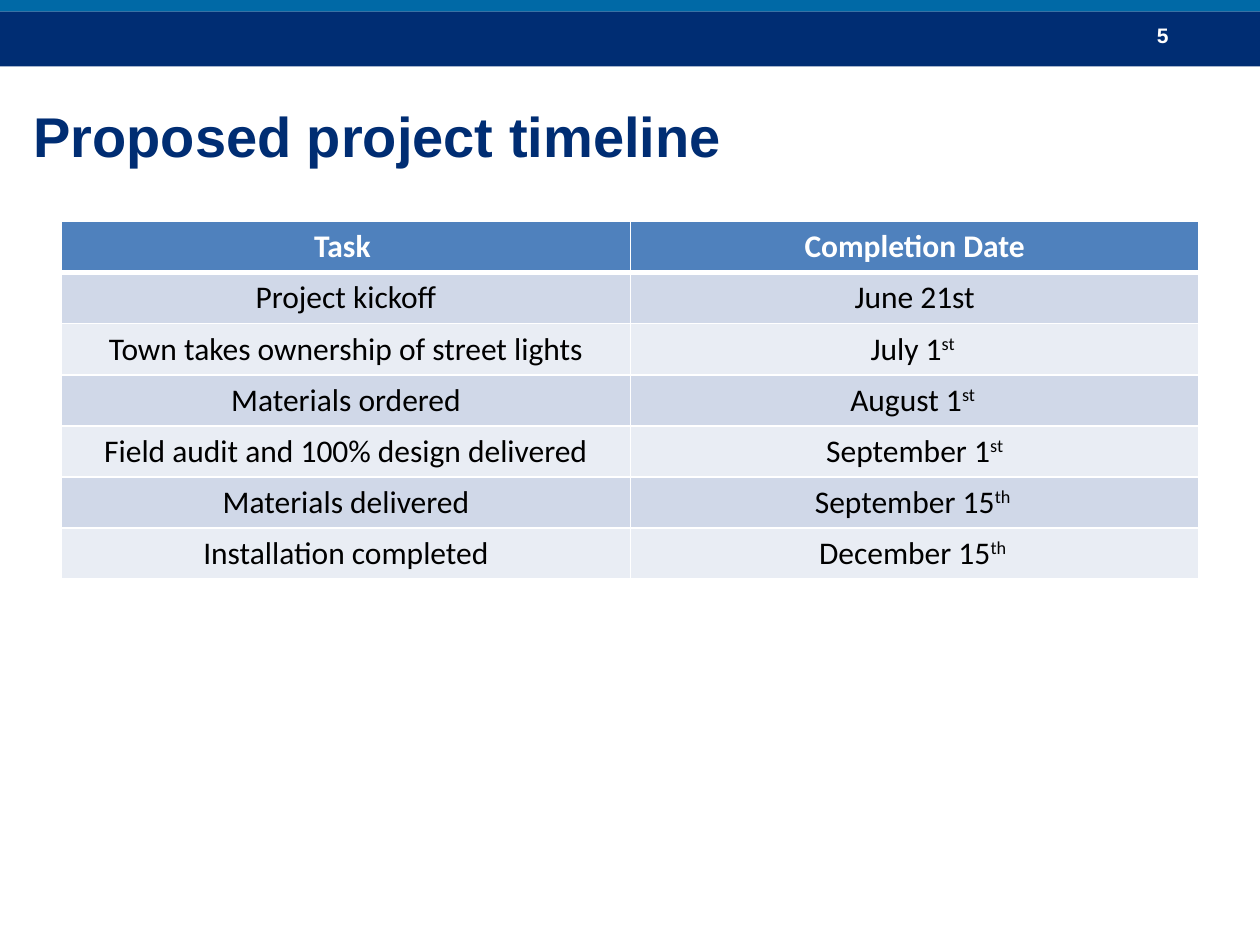
"""Build the project timeline slide with its header bands, title and task table."""
from dataclasses import dataclass

from lxml import etree
from pptx import Presentation, util as u
from pptx.dml.color import RGBColor
from pptx.enum import shapes, text
from pptx.oxml.ns import qn

NAVY, BLUE, WHITE, BLACK = "002D73", "0069A6", "FFFFFF", "000000"
HEADER_FILL, ROW_FILLS = "4F81BD", ("D0D8E8", "E9EDF4")
ROW_HEIGHT, COLUMN_WIDTH = 29.2, 325


@dataclass(frozen=True)
class Box:
    left: float
    top: float
    width: float
    height: float

    def lengths(self) -> tuple:
        return tuple(u.Pt(value) for value in (self.left, self.top, self.width, self.height))


@dataclass(frozen=True)
class Style:
    size: float
    font: str
    color: str
    bold: bool


@dataclass(frozen=True)
class Task:
    name: str
    date: str
    suffix: str = ""


TASKS = (
    Task("Project kickoff", "June 21st"),
    Task("Town takes ownership of street lights", "July 1", "st "),
    Task("Materials ordered", "August 1", "st "),
    Task("Field audit and 100% design delivered", "September 1", "st"),
    Task("Materials delivered", "September 15", "th "),
    Task("Installation completed", "December 15", "th "),
)


def set_fill(fill, color: str) -> None:
    fill.solid()
    fill.fore_color.rgb = RGBColor.from_string(color)


def add_run(paragraph, content: str, style: Style, superscript: bool = False) -> None:
    run = paragraph.add_run()
    run.text = content
    run.font.size = u.Pt(style.size)
    run.font.name = style.font
    run.font.bold = style.bold
    run.font.color.rgb = RGBColor.from_string(style.color)
    if superscript:
        run._r.get_or_add_rPr().set("baseline", "30000")


def add_band(slide, box: Box, color: str) -> None:
    shape = slide.shapes.add_shape(shapes.MSO_SHAPE.RECTANGLE, *box.lengths())
    shape.shadow.inherit = False
    set_fill(shape.fill, color)
    shape.line.fill.background()


def add_label(slide, box: Box, content: str, style: Style, anchor) -> None:
    frame = slide.shapes.add_textbox(*box.lengths()).text_frame
    frame.word_wrap = True
    frame.vertical_anchor = anchor
    add_run(frame.paragraphs[0], content, style)


def set_borders(cell, bottom_width: float) -> None:
    properties = cell._tc.get_or_add_tcPr()
    for side, width in (("L", 1), ("R", 1), ("T", 1), ("B", bottom_width)):
        line = etree.SubElement(properties, qn(f"a:ln{side}"), w=str(u.Pt(width)))
        fill = etree.SubElement(line, qn("a:solidFill"))
        etree.SubElement(fill, qn("a:srgbClr"), val=WHITE)


def fill_cell(cell, content: str, suffix: str, style: Style, color: str, bottom_width: float) -> None:
    set_borders(cell, bottom_width)
    set_fill(cell.fill, color)
    paragraph = cell.text_frame.paragraphs[0]
    paragraph.alignment = text.PP_ALIGN.CENTER
    add_run(paragraph, content, style)
    if suffix:
        add_run(paragraph, suffix, style, superscript=True)


def add_timeline(slide, left: float, top: float) -> None:
    rows = (Task("Task ", "Completion Date"), *TASKS)
    box = Box(left, top, 2 * COLUMN_WIDTH, ROW_HEIGHT * len(rows))
    table = slide.shapes.add_table(len(rows), 2, *box.lengths()).table
    for index, task in enumerate(rows):
        table.rows[index].height = u.Pt(ROW_HEIGHT)
        header = index == 0
        style = Style(18, "Calibri", WHITE if header else BLACK, header)
        color = HEADER_FILL if header else ROW_FILLS[(index - 1) % 2]
        bottom_width = 3 if header else 1
        fill_cell(table.cell(index, 0), task.name, "", style, color, bottom_width)
        fill_cell(table.cell(index, 1), task.date, task.suffix, style, color, bottom_width)


def main() -> None:
    presentation = Presentation()
    presentation.slide_width, presentation.slide_height = u.Pt(720), u.Pt(540)
    slide = presentation.slides.add_slide(presentation.slide_layouts[6])
    add_band(slide, Box(0, 6.5, 720, 31.5), NAVY)
    add_label(slide, Box(654, 9.5, 54, 29), "5", Style(12, "Arial", WHITE, True), text.MSO_ANCHOR.TOP)
    add_band(slide, Box(0, -2, 720, 8.5), BLUE)
    add_label(slide, Box(12, 47, 673, 61), "Proposed project timeline",
              Style(32, "Arial", NAVY, True), text.MSO_ANCHOR.MIDDLE)
    add_timeline(slide, 35.2, 126.6)
    presentation.save("out.pptx")


if __name__ == "__main__":
    main()
